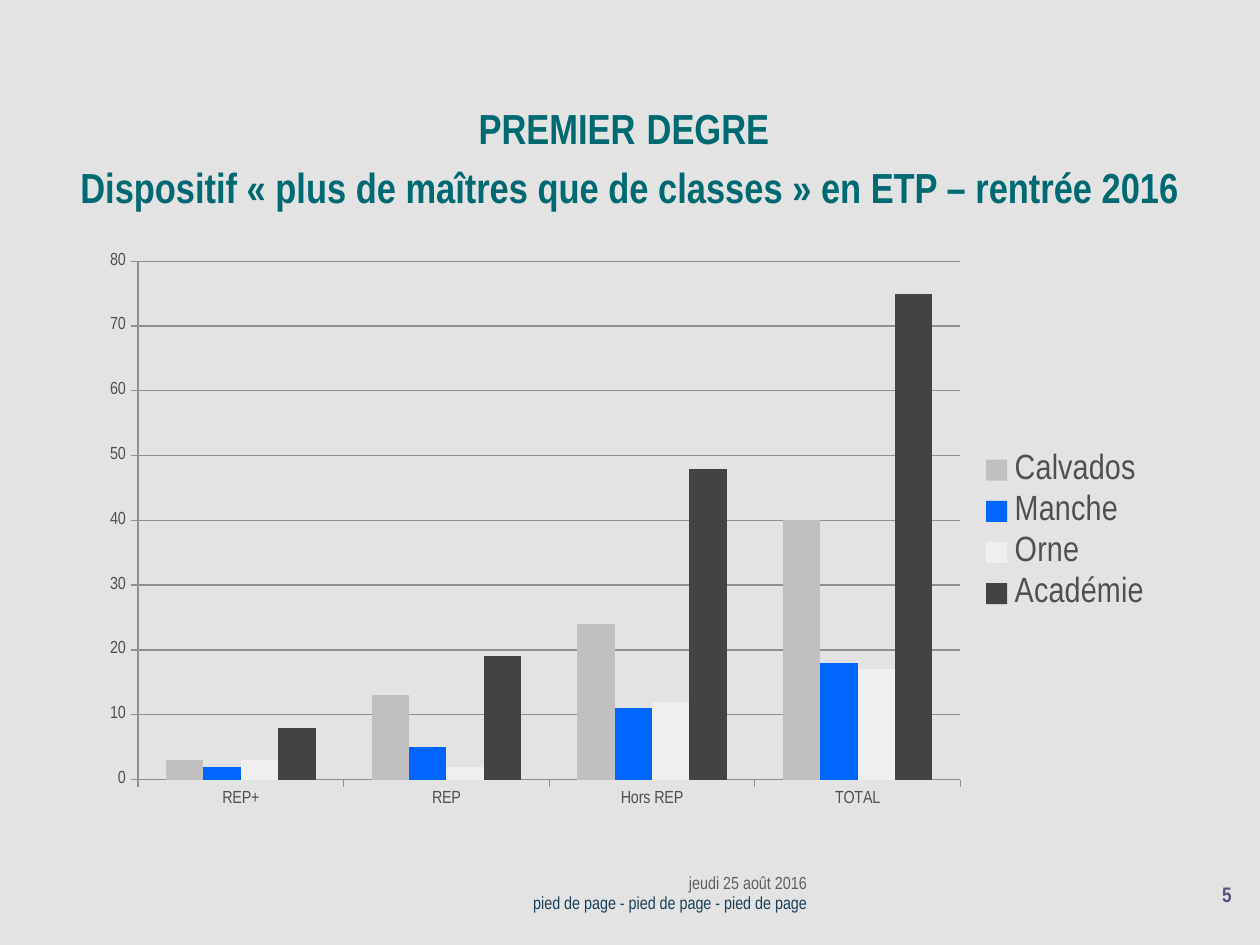
import pptx
import pptx.chart.data
import pptx.dml.color
import pptx.enum.chart
import pptx.enum.text
import pptx.oxml
import pptx.oxml.ns
import pptx.util

SCALE = 914400 / 126
FONT = "Arial Narrow"
ALIGN = pptx.enum.text.PP_ALIGN


def px(n):
    return pptx.util.Emu(round(n * SCALE))


def rgb(code):
    return pptx.dml.color.RGBColor.from_string(code)


def style(font, size, color, bold=False):
    font.name = FONT
    font.size = pptx.util.Pt(size)
    font.bold = bold
    font.color.rgb = rgb(color)


def add_run(para, text, size, color, bold=False):
    run = para.add_run()
    run.text = text
    style(run.font, size, color, bold)


def inset(frame):
    frame.margin_left = frame.margin_right = pptx.util.Inches(0.1)
    frame.margin_top = frame.margin_bottom = 0


def add_title(slide, x, y, w, h):
    title = slide.shapes.title
    title.left, title.top, title.width, title.height = map(px, (x, y, w, h))
    frame = title.text_frame
    inset(frame)
    frame.word_wrap = True
    frame.auto_size = pptx.enum.text.MSO_AUTO_SIZE.NONE
    frame.vertical_anchor = pptx.enum.text.MSO_ANCHOR.MIDDLE
    para = frame.paragraphs[0]
    para.alignment = ALIGN.CENTER
    para.line_spacing = pptx.util.Pt(33)
    for text, size in (("PREMIER", 24), (" ", 28), ("DEGRE", 24), (" ", 28)):
        add_run(para, text, size, "006A72", True)
    para.add_line_break()
    add_run(para, "Dispositif « plus de maîtres que de classes » en ETP – rentrée 2016",
            24, "006A72", True)


def add_note(slide, box, text, size, color, bold=False, wrap=True):
    """Add one right-aligned line of footer text."""
    frame = slide.shapes.add_textbox(*map(px, box)).text_frame
    inset(frame)
    frame.word_wrap = wrap
    frame.auto_size = pptx.enum.text.MSO_AUTO_SIZE.SHAPE_TO_FIT_TEXT
    para = frame.paragraphs[0]
    para.alignment = ALIGN.RIGHT
    add_run(para, text, size, color, bold)


def add_footer(slide, x, y):
    add_note(slide, (x + 374, y, 350, 21), "jeudi 25 août 2016", 10, "606060")
    add_note(slide, (x, y + 20, 724, 21),
             "pied de page - pied de page - pied de page", 10, "1C405A")
    add_note(slide, (x + 1091, y + 10, 58, 25), "5", 12, "57517B", True, False)


def set_plot(chart, x, y, w, h):
    """Fix the inner plot area, in fractions of the chart."""
    parts = "".join(f'<c:{tag} val="{val}"/>'
                    for tag, val in zip("xywh", (x, y, w, h)))
    area = chart.plots[0]._element.getparent()
    for old in area.findall(pptx.oxml.ns.qn("c:layout")):
        area.remove(old)
    area.insert(0, pptx.oxml.parse_xml(
        f'<c:layout {pptx.oxml.ns.nsdecls("c")}><c:manualLayout>'
        '<c:layoutTarget val="inner"/><c:xMode val="edge"/><c:yMode val="edge"/>'
        f'{parts}</c:manualLayout></c:layout>'))


def add_bars(slide, x, y, w, h):
    rows = (("Calvados", (3, 13, 24, 40), "C0C0C0"),
            ("Manche", (2, 5, 11, 18), "0066FF"),
            ("Orne", (3, 2, 12, 17), "EFEFEF"),
            ("Académie", (8, 19, 48, 75), "434343"))
    data = pptx.chart.data.CategoryChartData()
    data.categories = ("REP+", "REP", "Hors REP", "TOTAL")
    for name, vals, color in rows:
        data.add_series(name, vals)
    chart = slide.shapes.add_chart(
        pptx.enum.chart.XL_CHART_TYPE.COLUMN_CLUSTERED,
        *map(px, (x, y, w, h)), data).chart
    style(chart.font, 10, "505050")
    chart.has_title = False
    set_plot(chart, 0.05, 0.03, 0.76, 0.9)

    plot = chart.plots[0]
    plot.gap_width = 150
    plot.overlap = 0
    plot.vary_by_categories = False
    for series, (name, vals, color) in zip(plot.series, rows):
        series.format.fill.solid()
        series.format.fill.fore_color.rgb = rgb(color)
        series.format.line.fill.background()

    axis = chart.value_axis
    axis.minimum_scale, axis.maximum_scale, axis.major_unit = 0, 80, 10
    axis.has_major_gridlines = True
    lines = [axis.major_gridlines.format.line]
    for each in (axis, chart.category_axis):
        each.major_tick_mark = pptx.enum.chart.XL_TICK_MARK.OUTSIDE
        lines.append(each.format.line)
    for line in lines:
        line.color.rgb = rgb("909090")
        line.width = pptx.util.Pt(0.75)

    chart.has_legend = True
    chart.legend.position = pptx.enum.chart.XL_LEGEND_POSITION.RIGHT
    chart.legend.include_in_layout = False
    style(chart.legend.font, 20, "505050")


def main():
    deck = pptx.Presentation()
    deck.slide_width, deck.slide_height = px(1260), px(945)
    slide = deck.slides.add_slide(deck.slide_layouts[5])
    slide.background.fill.solid()
    slide.background.fill.fore_color.rgb = rgb("E3E3E3")
    add_title(slide, 44, 94, 1171, 120)
    add_bars(slide, 84, 244, 1082, 576)
    add_footer(slide, 95, 872)
    deck.save("out.pptx")


if __name__ == "__main__":
    main()
